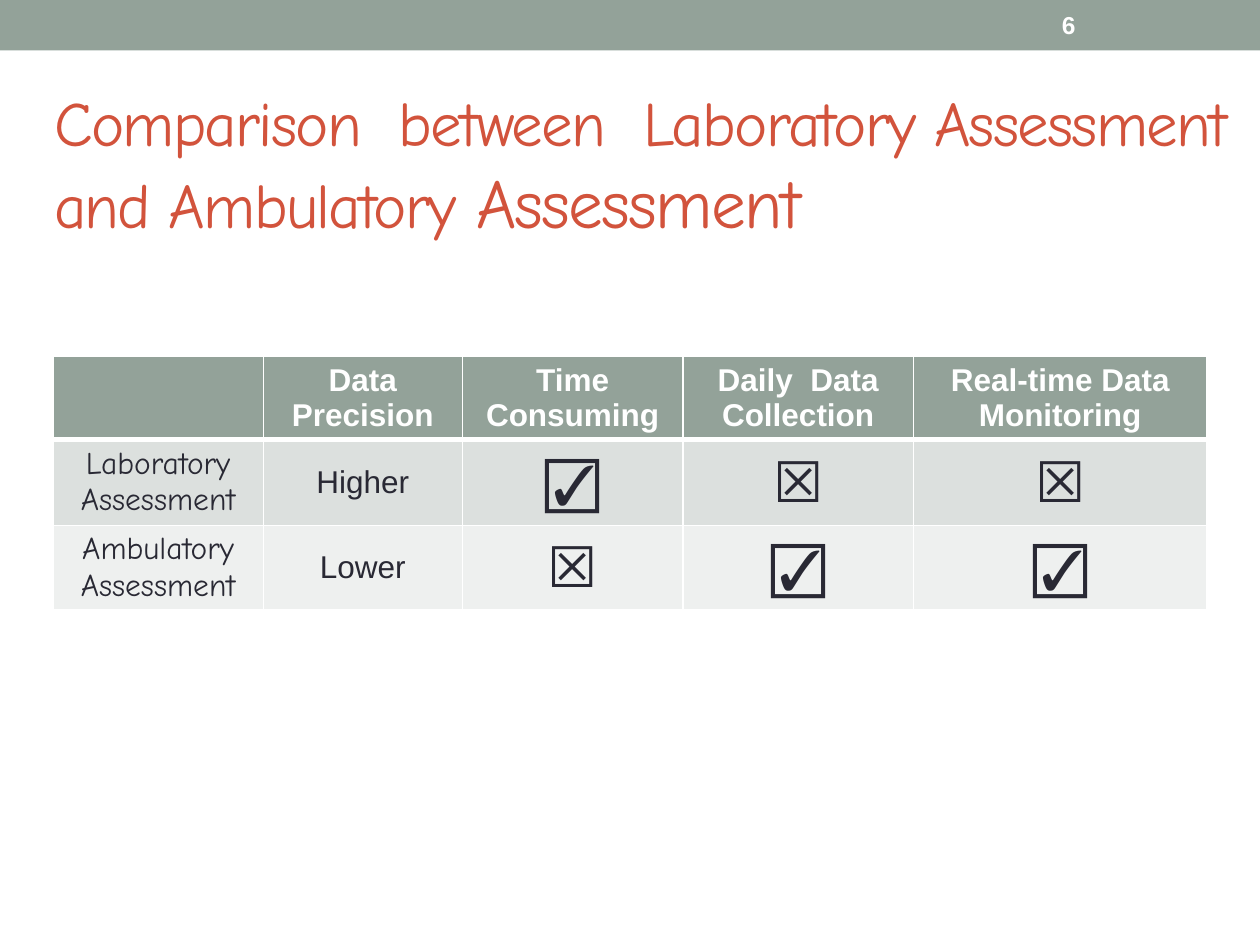
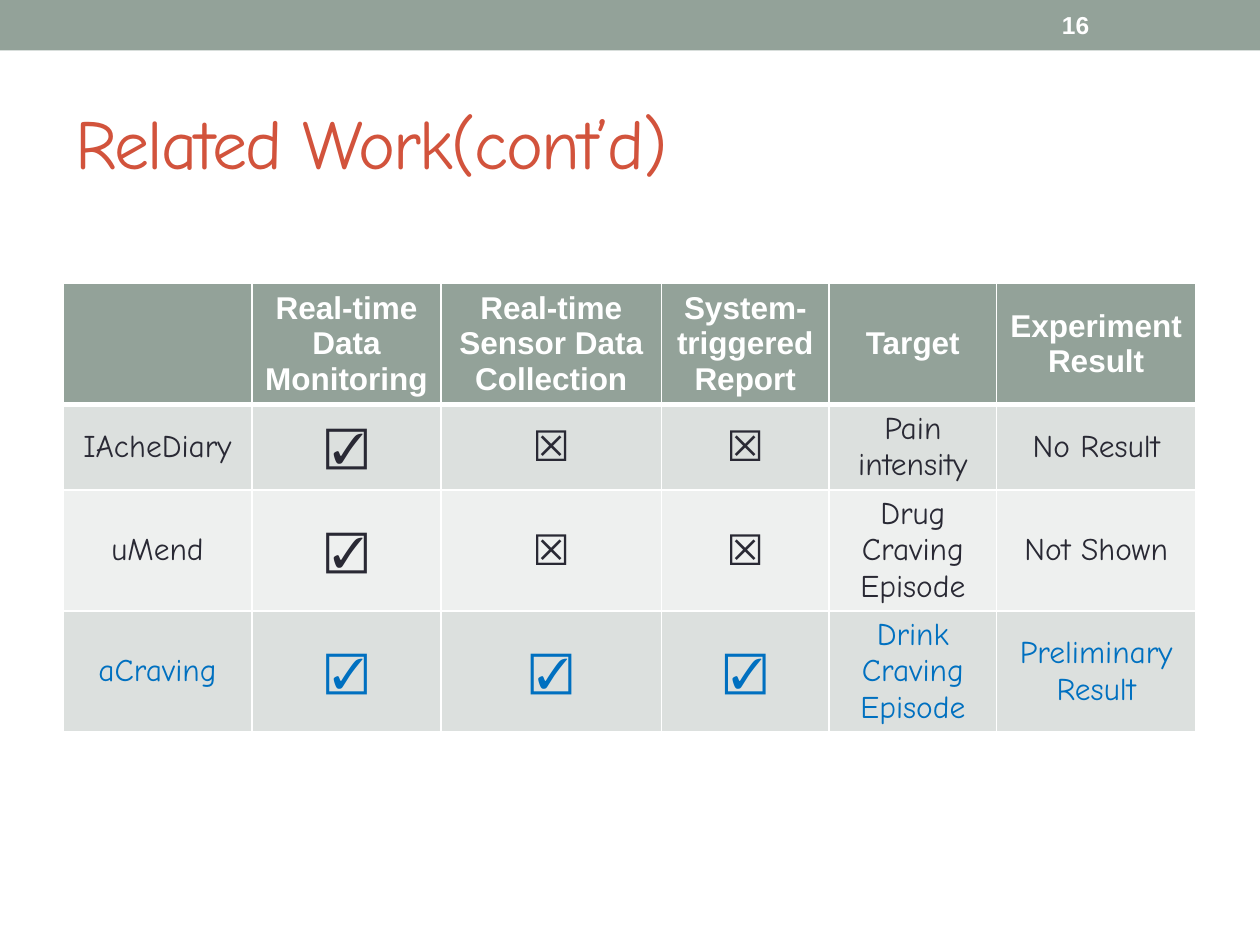
from lxml import etree
from pptx import Presentation
from pptx.dml.color import RGBColor
from pptx.enum.shapes import MSO_SHAPE
from pptx.enum.text import MSO_ANCHOR, MSO_AUTO_SIZE, PP_ALIGN
from pptx.oxml.ns import qn
from pptx.util import Inches, Pt

RECT = MSO_SHAPE.RECTANGLE
MIDDLE = MSO_ANCHOR.MIDDLE
NO_FIT = MSO_AUTO_SIZE.NONE
LEFT, CENTER = PP_ALIGN.LEFT, PP_ALIGN.CENTER

SAGE, RUST, INK, BLUE, WHITE = "93A299", "D2533C", "292934", "0070C0", "FFFFFF"
STRIPES = ["DCE0DE", "EEF0EF"]
PLAIN, HAND = "Arial", "Comic Neue"
YES, NO = "☑", "☒"
TITLE_ONLY = 5


def color(code):
    return RGBColor.from_string(code)


class Deck:
    def __init__(self):
        self.prs = Presentation()
        self.prs.slide_width, self.prs.slide_height = Inches(10), Inches(7.5)
        self.slide = None

    def page(self, number):
        """Start a slide with its top band and page number."""
        self.slide = self.prs.slides.add_slide(self.prs.slide_layouts[TITLE_ONLY])
        band = self.slide.shapes.add_shape(RECT, 0, 0, Inches(10), Inches(0.4))
        band.shadow.inherit = False
        band.fill.solid()
        band.fill.fore_color.rgb = color(SAGE)
        band.line.fill.background()
        box = self.slide.shapes.add_textbox(
            Inches(8.33), Inches(0.02), Inches(1.17), Inches(0.36))
        frame = box.text_frame
        frame.word_wrap = True
        frame.vertical_anchor = MIDDLE
        self.run(frame.paragraphs[0], str(number), 14, PLAIN, WHITE, True)

    def run(self, para, text, size, font, code, bold=False):
        run = para.add_run()
        run.text = text
        run.font.size, run.font.name, run.font.bold = Pt(size), font, bold
        run.font.color.rgb = color(code)
        return run

    def title(self, left, top, width, parts):
        """Place the title; parts holds (text, size) pairs."""
        shape = self.slide.shapes.title
        shape.left, shape.top = Inches(left), Inches(top)
        shape.width, shape.height = Inches(width), Inches(1.08)
        frame = shape.text_frame
        frame.auto_size = NO_FIT
        frame.word_wrap = True
        frame.vertical_anchor = MIDDLE
        para = frame.paragraphs[0]
        para.alignment = LEFT
        for text, size in parts:
            run = self.run(para, text, size, HAND, RUST)
            run.font._element.set("spc", "-100")

    def border(self, cell, bottom, top):
        widths = {"a:lnL": 1, "a:lnR": 1, "a:lnT": top, "a:lnB": bottom}
        props = cell._tc.get_or_add_tcPr()
        for tag, width in widths.items():
            line = etree.SubElement(props, qn(tag), w=str(Pt(width)))
            fill = etree.SubElement(line, qn("a:solidFill"))
            etree.SubElement(fill, qn("a:srgbClr"), val=WHITE)

    def cell(self, cell, text, style, fill, bottom=1, top=1):
        """Fill one cell; each line of text is a paragraph."""
        self.border(cell, bottom, top)
        cell.fill.solid()
        cell.fill.fore_color.rgb = color(fill)
        cell.vertical_anchor = MIDDLE
        cell.margin_top = cell.margin_bottom = Inches(0.03)
        frame = cell.text_frame
        for i, line in enumerate(text.split("\n") if text else []):
            para = frame.add_paragraph() if i else frame.paragraphs[0]
            para.alignment = CENTER
            self.run(para, line, *style)

    def table(self, left, top, cols, heights, rows, font, mark, accent=None):
        """Draw a header row and striped rows; accent is the blue row."""
        grid = self.slide.shapes.add_table(
            len(rows), len(cols), Inches(left), Inches(top),
            Inches(sum(cols)), Inches(sum(heights))).table
        grid.horz_banding = False
        for col, width in zip(grid.columns, cols):
            col.width = Inches(width)
        for r, (row, height) in enumerate(zip(rows, heights)):
            grid.rows[r].height = Inches(height)
            for c, text in enumerate(row):
                cell = grid.cell(r, c)
                if r == 0:
                    head = (18, PLAIN, WHITE, True)
                    self.cell(cell, text, head, SAGE, bottom=3)
                    continue
                ink = BLUE if r == accent else INK
                if text in (YES, NO):
                    style = (mark, PLAIN, ink)
                else:
                    style = (18, font if c else HAND, ink)
                self.cell(cell, text, style, STRIPES[(r - 1) % 2],
                          top=3 if r == 1 else 1)


def main():
    deck = Deck()

    # Assessment comparison
    deck.page(6)
    deck.title(0.33, 0.75, 9.58, [
        ("Comparison  between  Laboratory Assessment and Ambulatory ", 36),
        ("Assessment", 39.6)])
    deck.table(0.42, 2.83, [1.67, 1.58, 1.75, 1.83, 2.33], [0.65, 0.68, 0.67], [
        ["", "Data\nPrecision", "Time Consuming", "Daily  Data Collection",
         "Real-time Data Monitoring"],
        ["Laboratory\nAssessment", "Higher", YES, NO, NO],
        ["Ambulatory Assessment", "Lower", NO, YES, YES],
    ], PLAIN, 32)

    # Related work
    deck.page(16)
    deck.title(0.5, 0.58, 9, [("Related Work(cont’d)", 40)])
    deck.table(0.5, 2.25, [1.5, 1.5, 1.75, 1.33, 1.33, 1.58],
               [0.94, 0.68, 0.96, 0.96], [
        ["", "Real-time\nData\nMonitoring", "Real-time Sensor Data Collection",
         "System-triggered Report", "Target", "Experiment Result"],
        ["IAcheDiary", YES, NO, NO, "Pain intensity", "No Result"],
        ["uMend", YES, NO, NO, "Drug Craving Episode", "Not Shown"],
        ["aCraving", YES, YES, YES, "Drink Craving Episode", "Preliminary Result"],
    ], HAND, 24, accent=3)

    deck.prs.save("out.pptx")


if __name__ == "__main__":
    main()
